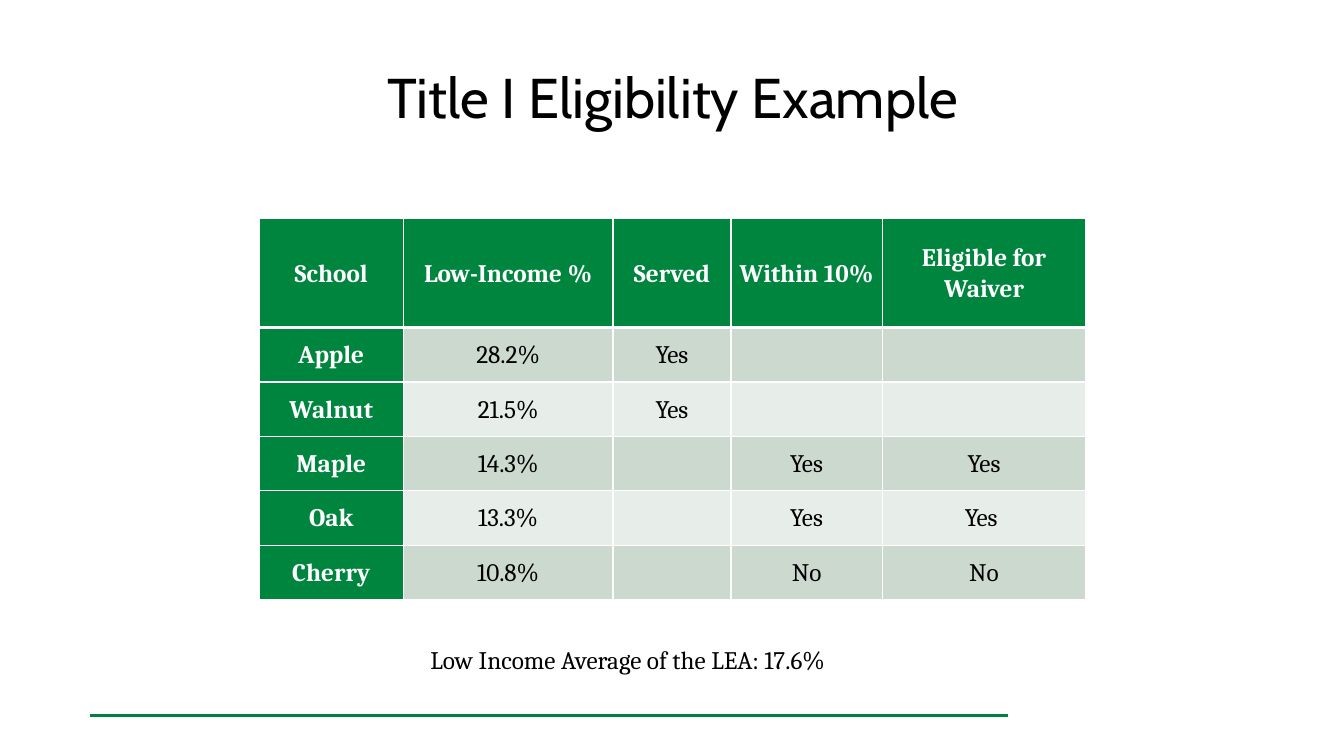
from lxml.etree import SubElement
from pptx import Presentation
from pptx.dml.color import RGBColor
from pptx.enum.shapes import MSO_CONNECTOR
from pptx.enum.text import MSO_ANCHOR, PP_ALIGN
from pptx.oxml.ns import qn
from pptx.util import Inches, Pt

BLACK = RGBColor(0x00, 0x00, 0x00)
WHITE = RGBColor(0xFF, 0xFF, 0xFF)
HEADER_GREEN = RGBColor(0x00, 0x85, 0x3F)
RULE_GREEN = RGBColor(0x00, 0x82, 0x3E)
BAND_COLORS = (RGBColor(0xCC, 0xD9, 0xCF), RGBColor(0xE7, 0xED, 0xE8))

TITLE_FONT = "Cabin"
BODY_FONT = "Cambria"
BODY_SIZE = 18

COLUMN_WIDTHS = (1.43, 2.08, 1.17, 1.5, 2.02)
ROW_HEIGHT = 0.54
SCHOOLS = (
    ("School", "Low-Income %", "Served", "Within 10%", "Eligible for Waiver"),
    ("Apple", "28.2%", "Yes", "", ""),
    ("Walnut", "21.5%", "Yes", "", ""),
    ("Maple", "14.3%", "", "Yes", "Yes"),
    ("Oak", "13.3%", "", "Yes", "Yes "),
    ("Cherry", "10.8%", "", "No", "No"),
)


def add_text(paragraph, text, font_name, size, color=BLACK, bold=False):
    run = paragraph.add_run()
    run.text = text
    run.font.name = font_name
    run.font.size = Pt(size)
    run.font.color.rgb = color
    run.font.bold = bold


def add_rule(slide, left, top, width):
    rule = slide.shapes.add_connector(
        MSO_CONNECTOR.STRAIGHT, Inches(left), Inches(top), Inches(left + width), Inches(top)
    )
    rule.line.color.rgb = RULE_GREEN
    rule.line.width = Pt(2.25)
    SubElement(rule._element.spPr, qn("a:effectLst"))


def place_title(slide, left, top, width, height, text):
    title = slide.shapes.title
    title.left, title.top = Inches(left), Inches(top)
    title.width, title.height = Inches(width), Inches(height)
    frame = title.text_frame
    frame.vertical_anchor = MSO_ANCHOR.MIDDLE
    paragraph = frame.paragraphs[0]
    paragraph.alignment = PP_ALIGN.CENTER
    add_text(paragraph, text, TITLE_FONT, 40)


def set_borders(cell, top_width, bottom_width):
    """Draw white borders; call before filling, as borders come first in the XML."""
    properties = cell._tc.get_or_add_tcPr()
    widths = {"a:lnL": 1, "a:lnR": 1, "a:lnT": top_width, "a:lnB": bottom_width}
    for tag, width in widths.items():
        border = SubElement(properties, qn(tag), w=str(Pt(width)))
        fill = SubElement(border, qn("a:solidFill"))
        SubElement(fill, qn("a:srgbClr"), val=str(WHITE))


def format_cell(cell, text, row, column):
    is_heading = row == 0 or column == 0
    set_borders(cell, 3 if row == 1 else 1, 3 if row == 0 else 1)
    cell.fill.solid()
    cell.fill.fore_color.rgb = HEADER_GREEN if is_heading else BAND_COLORS[(row - 1) % 2]
    cell.vertical_anchor = MSO_ANCHOR.MIDDLE
    cell.margin_left = cell.margin_right = Inches(0.07)
    cell.margin_top = cell.margin_bottom = 0
    paragraph = cell.text_frame.paragraphs[0]
    paragraph.alignment = PP_ALIGN.CENTER
    paragraph.line_spacing = 1.05
    if text:
        color = WHITE if is_heading else BLACK
        add_text(paragraph, text, BODY_FONT, BODY_SIZE, color, is_heading)


def add_school_table(slide, left, top):
    row_heights = [2 * ROW_HEIGHT] + [ROW_HEIGHT] * (len(SCHOOLS) - 1)
    table = slide.shapes.add_table(
        len(SCHOOLS), len(COLUMN_WIDTHS), Inches(left), Inches(top),
        Inches(sum(COLUMN_WIDTHS)), Inches(sum(row_heights)),
    ).table
    for column, width in zip(table.columns, COLUMN_WIDTHS):
        column.width = Inches(width)
    for row, height in zip(table.rows, row_heights):
        row.height = Inches(height)
    for row, values in enumerate(SCHOOLS):
        for column, text in enumerate(values):
            format_cell(table.cell(row, column), text, row, column)


def add_average_note(slide, left, top, width, height):
    note = slide.shapes.add_textbox(Inches(left), Inches(top), Inches(width), Inches(height))
    note.text_frame.word_wrap = True
    add_text(note.text_frame.paragraphs[0], "Low Income Average of the LEA: 17.6%",
             BODY_FONT, BODY_SIZE)


def main():
    presentation = Presentation()
    presentation.slide_width = Inches(13.33)
    presentation.slide_height = Inches(7.5)
    slide = presentation.slides.add_slide(presentation.slide_layouts.get_by_name("Title Only"))
    add_rule(slide, 0.89, 7.1, 9.11)
    place_title(slide, 0.67, 0.33, 12, 1.25, "Title I Eligibility Example")
    add_school_table(slide, 2.57, 2.17)
    add_average_note(slide, 4.17, 6.34, 5, 0.4)
    presentation.save("out.pptx")


if __name__ == "__main__":
    main()
